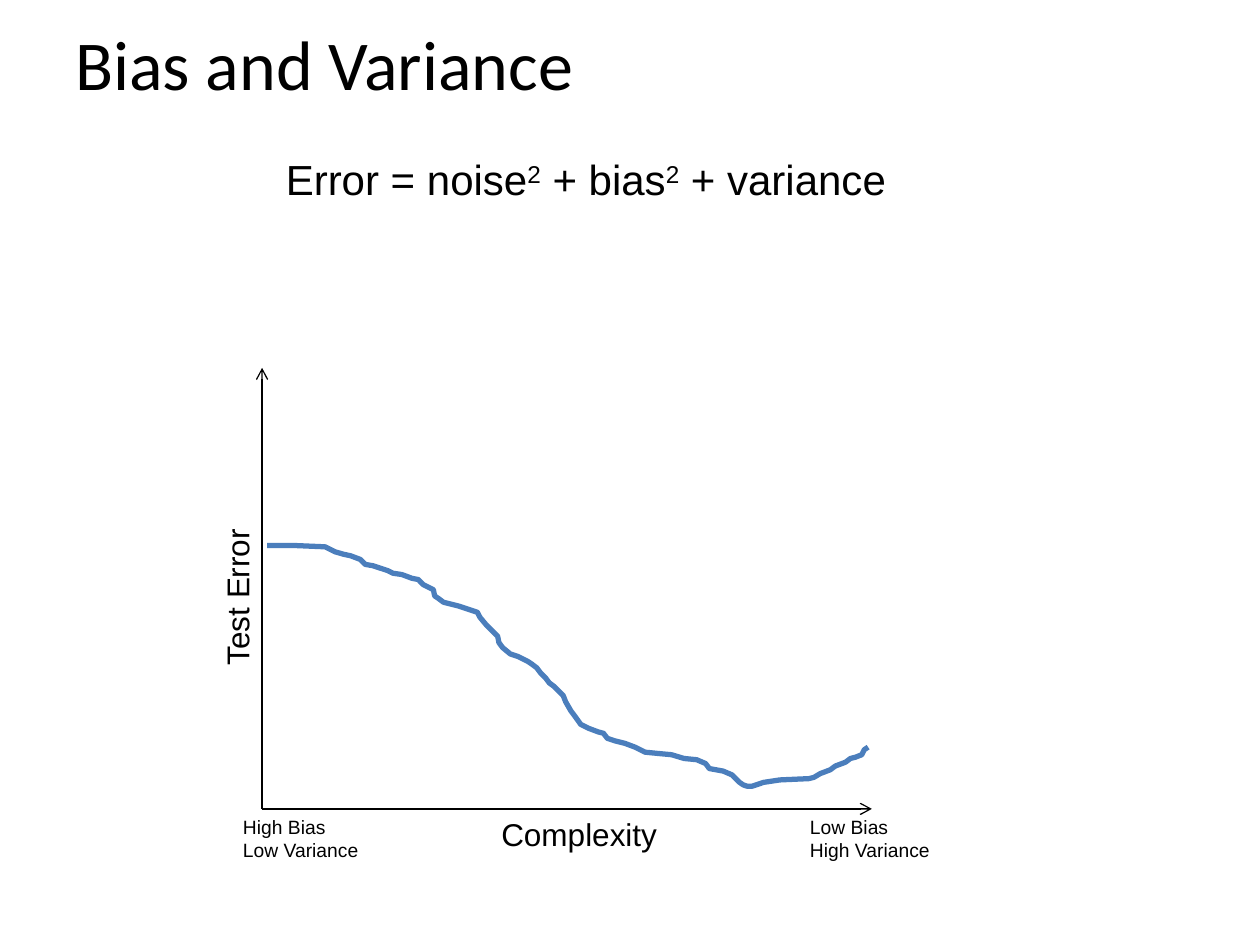
"""Build the Bias and Variance slide."""
import dataclasses

import pptx
import pptx.dml.color
import pptx.enum.shapes
import pptx.enum.text
import pptx.oxml
import pptx.oxml.ns
import pptx.util

Inches = pptx.util.Inches


@dataclasses.dataclass(frozen=True)
class Theme:
    """Colours, fonts and sizes of the slide."""
    ink: str = "000000"
    curve: str = "4B7EBC"
    title_font: str = "Calibri"
    body_font: str = "Arial"
    title_size: float = 40
    formula_size: float = 24
    axis_size: float = 18
    note_size: float = 11
    axis_width: float = 0.75
    curve_width: float = 3


@dataclasses.dataclass(frozen=True)
class Box:
    """A rectangle in inches."""
    left: float
    top: float
    width: float
    height: float


THEME = Theme()

ERROR_POINTS = [
    (2.12, 4.33), (2.35, 4.33), (2.58, 4.34), (2.62, 4.36), (2.66, 4.38),
    (2.73, 4.4), (2.78, 4.41), (2.86, 4.44), (2.9, 4.48), (2.96, 4.49),
    (3.08, 4.53), (3.12, 4.55), (3.19, 4.56), (3.27, 4.59), (3.32, 4.6),
    (3.36, 4.64), (3.4, 4.66), (3.44, 4.68), (3.45, 4.73), (3.48, 4.75),
    (3.52, 4.78), (3.64, 4.81), (3.73, 4.84), (3.79, 4.86), (3.81, 4.9),
    (3.86, 4.96), (3.92, 5.02), (3.95, 5.05), (3.96, 5.1), (3.99, 5.14),
    (4.05, 5.19), (4.11, 5.21), (4.15, 5.23), (4.19, 5.25), (4.22, 5.27),
    (4.26, 5.3), (4.29, 5.34), (4.33, 5.38), (4.36, 5.42), (4.4, 5.45),
    (4.47, 5.52), (4.49, 5.57), (4.53, 5.64), (4.56, 5.68), (4.61, 5.75),
    (4.67, 5.78), (4.75, 5.81), (4.79, 5.82), (4.82, 5.86), (4.88, 5.88),
    (4.96, 5.9), (5.04, 5.93), (5.12, 5.97), (5.22, 5.98), (5.33, 5.99),
    (5.43, 6.02), (5.53, 6.03), (5.6, 6.06), (5.63, 6.1), (5.74, 6.12),
    (5.81, 6.15), (5.87, 6.21), (5.9, 6.23), (5.93, 6.24), (5.97, 6.24),
    (6.06, 6.21), (6.19, 6.19), (6.42, 6.18), (6.46, 6.17), (6.51, 6.14),
    (6.59, 6.11), (6.63, 6.08), (6.71, 6.05), (6.75, 6.02), (6.79, 6.01),
    (6.84, 5.99), (6.86, 5.95), (6.89, 5.93),
]


def add_text(slide, box, text, size, font=THEME.body_font, wrap=False,
             rotation=0, middle=False):
    """Add a text box; parts between carets are superscript."""
    shape = slide.shapes.add_textbox(Inches(box.left), Inches(box.top),
                                     Inches(box.width), Inches(box.height))
    shape.rotation = rotation
    frame = shape.text_frame
    frame.word_wrap = wrap
    if middle:
        frame.vertical_anchor = pptx.enum.text.MSO_ANCHOR.MIDDLE
    for number, line in enumerate(text.split("\n")):
        paragraph = frame.add_paragraph() if number else frame.paragraphs[0]
        for index, part in enumerate(line.split("^")):
            run = paragraph.add_run()
            run.text = part
            run.font.name = font
            run.font.size = pptx.util.Pt(size)
            run.font.color.rgb = pptx.dml.color.RGBColor.from_string(THEME.ink)
            if index % 2:
                run._r.get_or_add_rPr().set("baseline", "30000")
    return shape


def style_line(shape, color, width):
    """Set the colour and width of a line."""
    shape.line.color.rgb = pptx.dml.color.RGBColor.from_string(color)
    shape.line.width = pptx.util.Pt(width)


def add_axis(slide, start, end):
    """Draw an axis with an open arrowhead at its end."""
    axis = slide.shapes.add_connector(
        pptx.enum.shapes.MSO_CONNECTOR.STRAIGHT,
        *(Inches(value) for value in start + end))
    style_line(axis, THEME.ink, THEME.axis_width)
    namespace = pptx.oxml.ns.nsdecls("a")
    axis.line._get_or_add_ln().append(
        pptx.oxml.parse_xml(f'<a:tailEnd {namespace} type="arrow"/>'))
    axis._element.spPr.append(
        pptx.oxml.parse_xml(f"<a:effectLst {namespace}/>"))


def add_curve(slide, points):
    """Draw the open test error curve."""
    first, *rest = [(Inches(x), Inches(y)) for x, y in points]
    builder = slide.shapes.build_freeform(*first, scale=1.0)
    builder.add_line_segments(rest, close=False)
    curve = builder.convert_to_shape()
    curve.shadow.inherit = False
    curve.fill.background()
    style_line(curve, THEME.curve, THEME.curve_width)


def add_heading(slide, box):
    """Place the slide title."""
    add_text(slide, box, "Bias and Variance", THEME.title_size,
             font=THEME.title_font, wrap=True, middle=True)


def add_formula(slide, box):
    """Place the error decomposition."""
    add_text(slide, box, "Error = noise^2^ + bias^2^ + variance",
             THEME.formula_size, wrap=True)


def add_error_plot(slide, box):
    """Place the curve, axes and labels around the plot area."""
    bottom, right = box.top + box.height, box.left + box.width
    origin = (box.left, bottom)
    add_curve(slide, [(box.left + x - 2.08, box.top + y - 2.92)
                      for x, y in ERROR_POINTS])
    add_axis(slide, origin, (box.left, box.top))
    add_axis(slide, origin, (right, bottom))
    add_text(slide, Box(box.left + 1.8, bottom, 1.45, 0.4), "Complexity",
             THEME.axis_size)
    add_text(slide, Box(box.left - 0.85, box.top + 1.61, 1.3, 0.4),
             "Test Error", THEME.axis_size, rotation=270)
    add_text(slide, Box(box.left - 0.25, bottom, 1.14, 0.47),
             "High Bias\nLow Variance", THEME.note_size)
    add_text(slide, Box(right - 0.59, bottom, 1.17, 0.47),
             "Low Bias\nHigh Variance", THEME.note_size)


def main():
    """Build and save the presentation."""
    presentation = pptx.Presentation()
    presentation.slide_width = Inches(10)
    presentation.slide_height = Inches(7.5)
    slide = presentation.slides.add_slide(presentation.slide_layouts[6])
    add_heading(slide, Box(0.5, 0, 9, 1))
    add_error_plot(slide, Box(2.08, 2.92, 4.84, 3.5))
    add_formula(slide, Box(2.17, 1.17, 5, 0.51))
    presentation.save("out.pptx")


if __name__ == "__main__":
    main()
